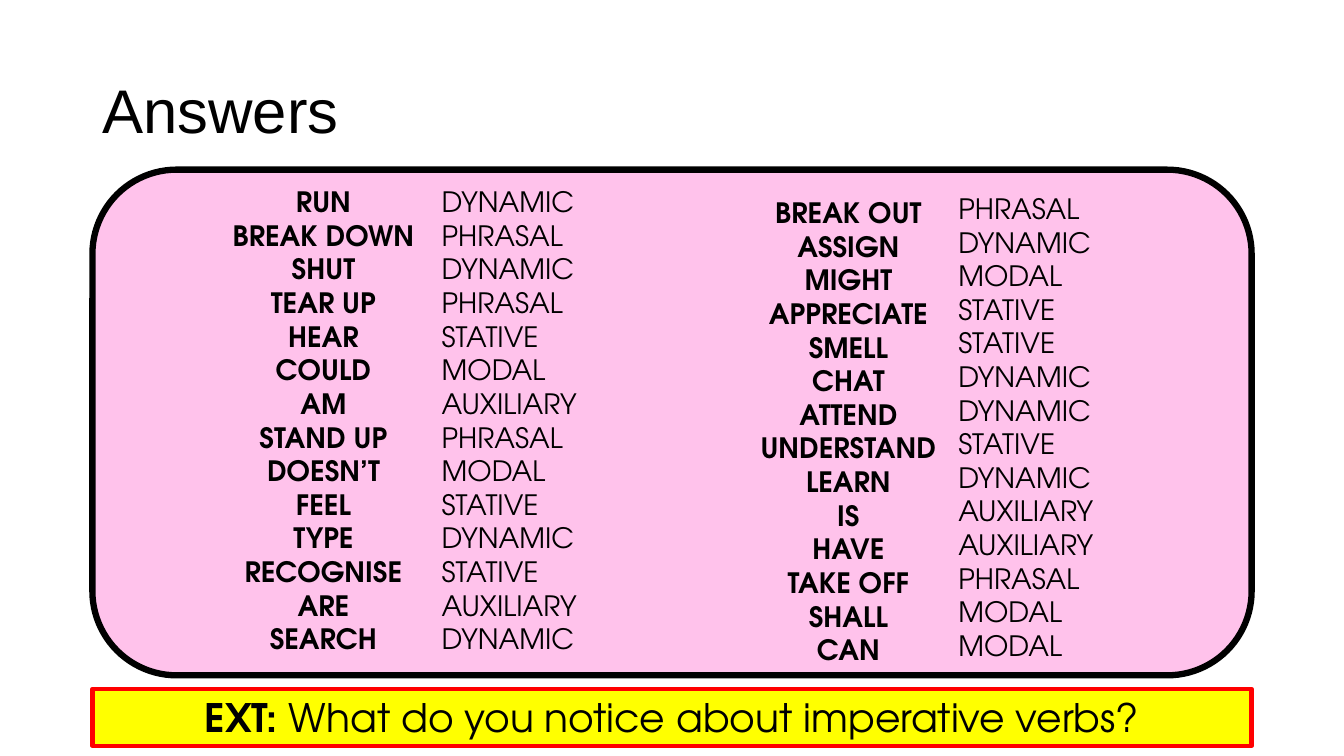
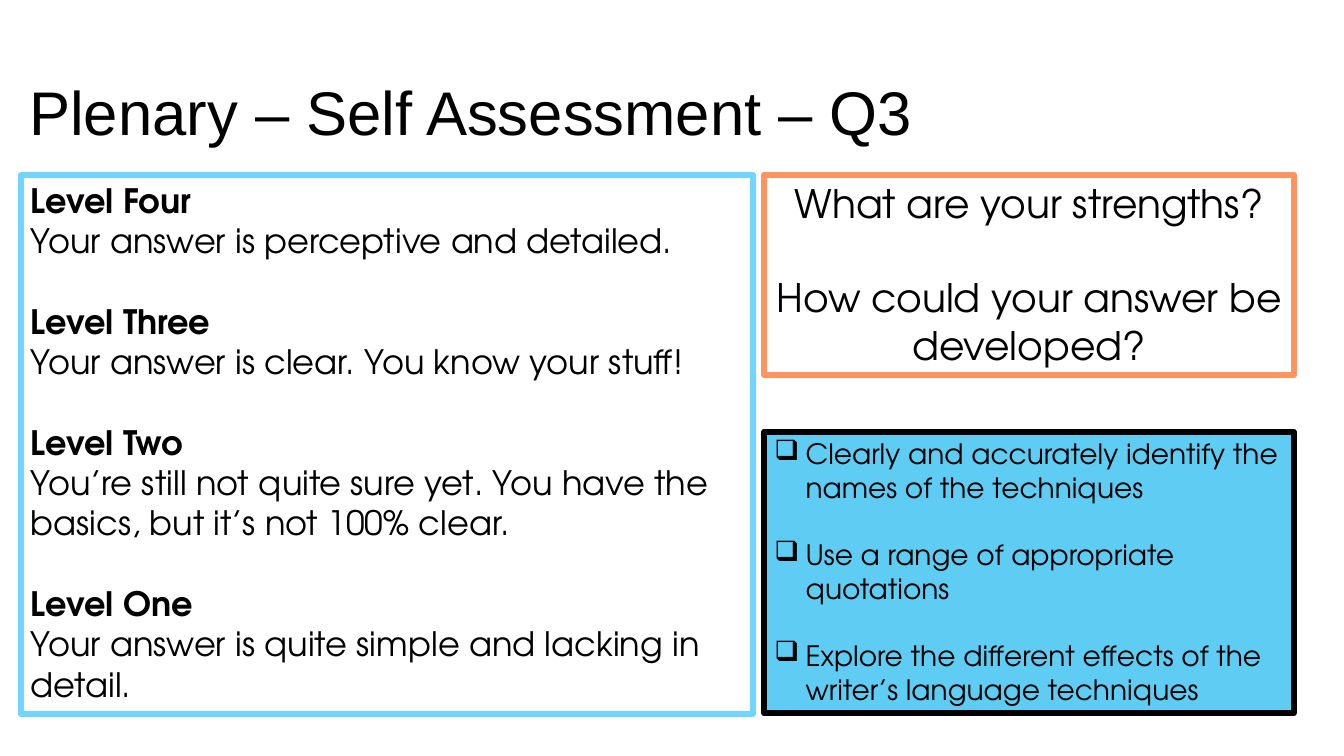
from lxml.etree import SubElement
from pptx import Presentation
from pptx.dml.color import RGBColor
from pptx.enum.shapes import MSO_SHAPE as Shape
from pptx.enum.text import MSO_ANCHOR as Anchor, MSO_AUTO_SIZE as Fit, PP_ALIGN as Align
from pptx.oxml.ns import qn
from pptx.util import Inches, Pt

# Grid of square cells across the slide
COLUMNS, ROWS = 160, 90
WIDTH, HEIGHT = Inches(13.33), Inches(7.5)

# Shared style
BLACK, WHITE = "000000", "FFFFFF"
TITLE_FONT, BODY_FONT = "Arial", "TeX Gyre Adventor"
LINE_HEIGHT = 1.2
BULLET, INDENT = "❑", Inches(0.31)


def color(code):
    return RGBColor.from_string(code)


def write(shape, groups, *, font=BODY_FONT, size=20, align=Align.LEFT, bold=False,
          anchor=Anchor.TOP, spacing=None, bullet=None, fit=Fit.SHAPE_TO_FIT_TEXT):
    """Fill a shape with groups of lines, one line apart; **marks** set bold."""
    frame = shape.text_frame
    frame.word_wrap, frame.auto_size, frame.vertical_anchor = True, fit, anchor
    for group_index, group in enumerate(groups):
        for line_index, line in enumerate(group):
            first = group_index == line_index == 0
            para = frame.paragraphs[0] if first else frame.add_paragraph()
            para.alignment = align
            if spacing:
                para.line_spacing = spacing
            if line_index == 0 and not first:
                para.space_before = Pt(round(size * LINE_HEIGHT, 1))
            if bullet:
                props = para._p.get_or_add_pPr()
                props.set("marL", str(INDENT))
                props.set("indent", str(-INDENT))
                SubElement(props, qn("a:buChar"), char=bullet)
            for part_index, part in enumerate(line.split("**")):
                if part:
                    span = para.add_run()
                    span.text = part
                    span.font.name, span.font.size = font, Pt(size)
                    span.font.bold = bold or part_index % 2 == 1
                    span.font.color.rgb = color(BLACK)


class Builder:
    """Holds the deck and the slide in hand; places are in grid cells."""

    def __init__(self):
        self.deck = Presentation()
        self.deck.slide_width, self.deck.slide_height = WIDTH, HEIGHT
        self.page = None

    def place(self, column, row, columns, rows):
        across, down = WIDTH / COLUMNS, HEIGHT / ROWS
        return [int(length) for length in
                (column * across, row * down, columns * across, rows * down)]

    def add_page(self, title, *cells):
        self.page = self.deck.slides.add_slide(self.deck.slide_layouts[6])
        self.text(cells, [[title]], font=TITLE_FONT, size=44, spacing=0.9,
                  anchor=Anchor.MIDDLE, fit=Fit.NONE)

    def text(self, cells, groups, **style):
        box = self.page.shapes.add_textbox(*self.place(*cells))
        write(box, groups, **style)

    def panel(self, cells, fill, line, weight, groups=(), kind=Shape.RECTANGLE, **style):
        panel = self.page.shapes.add_shape(kind, *self.place(*cells))
        panel.shadow.inherit = False
        panel.fill.solid()
        panel.fill.fore_color.rgb = color(fill)
        panel.line.color.rgb = color(line)
        panel.line.width = Pt(weight)
        if groups:
            write(panel, groups, **style)


# Words and their verb types, left half then right half
LEFT_VERBS = [
    ("RUN", "DYNAMIC"), ("BREAK DOWN", "PHRASAL"), ("SHUT", "DYNAMIC"),
    ("TEAR UP", "PHRASAL"), ("HEAR", "STATIVE"), ("COULD", "MODAL"),
    ("AM", "AUXILIARY"), ("STAND UP", "PHRASAL"), ("DOESN’T", "MODAL"),
    ("FEEL", "STATIVE"), ("TYPE", "DYNAMIC"), ("RECOGNISE", "STATIVE"),
    ("ARE", "AUXILIARY"), ("SEARCH", "DYNAMIC"),
]
RIGHT_VERBS = [
    ("BREAK OUT", "PHRASAL"), ("ASSIGN", "DYNAMIC"), ("MIGHT", "MODAL"),
    ("APPRECIATE", "STATIVE"), ("SMELL", "STATIVE"), ("CHAT", "DYNAMIC"),
    ("ATTEND", "DYNAMIC"), ("UNDERSTAND", "STATIVE"), ("LEARN", "DYNAMIC"),
    ("IS", "AUXILIARY"), ("HAVE", "AUXILIARY"), ("TAKE OFF", "PHRASAL"),
    ("SHALL", "MODAL"), ("CAN", "MODAL"),
]
LEVELS = [
    ["**Level Four**", "Your answer is perceptive and detailed."],
    ["**Level Three**", "Your answer is clear. You know your stuff!"],
    ["**Level Two**", "You’re still not quite sure yet. You have the basics, "
                      "but it’s not 100% clear."],
    ["**Level One**", "Your answer is quite simple and lacking in detail."],
]
QUESTIONS = [["What are your strengths?"], ["How could your answer be developed?"]]
TARGETS = [
    ["Clearly and accurately identify the names of the techniques"],
    ["Use a range of appropriate quotations"],
    ["Explore the different effects of the writer’s language techniques"],
]


def answers(builder):
    left, width, list_rows = 11, 138, 57.7
    builder.add_page("Answers", left, 4.8, width, 17.4)
    builder.panel((left, 20.2, width, 60.2), "FFC2EB", BLACK, 4.5,
                  kind=Shape.ROUNDED_RECTANGLE)
    # Each half: verbs, then types, as (column, row, columns)
    halves = [(LEFT_VERBS, (23.9, 21.4, 29.2), (51.4, 21.4, 30)),
              (RIGHT_VERBS, (84.5, 22.7, 33), (112.9, 22.2, 29))]
    for pairs, verb_cells, type_cells in halves:
        verbs, types = zip(*pairs)
        builder.text((*verb_cells, list_rows), [verbs], bold=True, align=Align.CENTER)
        builder.text((*type_cells, list_rows), [types])
    # Extension task
    builder.panel((left, 82, width, 6.8), "FFFF00", "FF0000", 3,
                  [["**EXT: **What do you notice about imperative verbs?"]],
                  size=28, align=Align.CENTER)


def plenary(builder):
    top, right, right_width, weight = 20.8, 91, 63, 4.33
    builder.add_page("Plenary – Self Assessment – Q3", 2.3, 5, 153.4, 17.4)
    builder.panel((right, top, right_width, 23.9), WHITE, "FF9461", weight,
                  QUESTIONS, size=28, align=Align.CENTER)
    builder.panel((2.5, top, 87.1, 64.2), WHITE, "71D6FF", weight, LEVELS, size=24)
    builder.panel((right, 51.4, right_width, 33.5), "5ECCF3", BLACK, weight,
                  TARGETS, bullet=BULLET)


def main():
    builder = Builder()
    answers(builder)
    plenary(builder)
    builder.deck.save("out.pptx")


if __name__ == "__main__":
    main()
